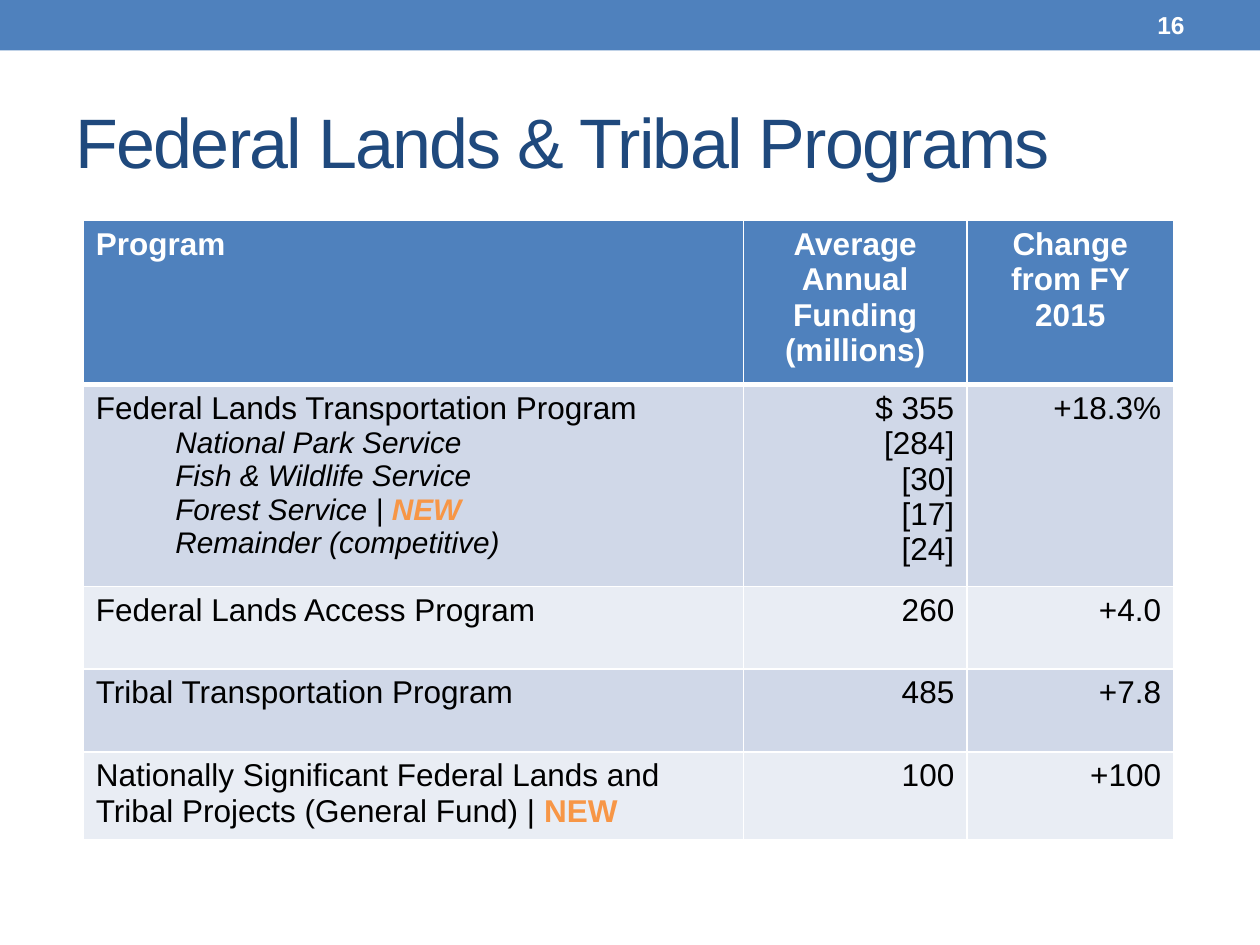
from pptx import Presentation
from pptx.dml.color import RGBColor
from pptx.enum.shapes import MSO_SHAPE
from pptx.enum.text import MSO_ANCHOR, PP_ALIGN
from pptx.oxml.ns import qn
from pptx.util import Cm, Pt
from lxml.etree import SubElement

BLUE = RGBColor(0x4F, 0x81, 0xBD)
NAVY = RGBColor(0x1F, 0x49, 0x7D)
ORANGE = RGBColor(0xF7, 0x96, 0x46)
BLACK = RGBColor(0, 0, 0)
WHITE = RGBColor(0xFF, 0xFF, 0xFF)
BANDS = [RGBColor(0xE9, 0xED, 0xF4), RGBColor(0xD0, 0xD8, 0xE8)]


def add_span(para, text, size, color, bold=False, italic=False):
    span = para.add_run()
    span.text = text
    span.font.name = "Arial"
    span.font.size = Pt(size)
    span.font.color.rgb = color
    span.font.bold = bold
    span.font.italic = italic
    return span


def add_borders(cell, bottom_width):
    properties = cell._tc.get_or_add_tcPr()
    for side, width in (("L", 1), ("R", 1), ("T", 1), ("B", bottom_width)):
        line = SubElement(properties, qn(f"a:ln{side}"), w=str(Pt(width)))
        fill = SubElement(line, qn("a:solidFill"))
        SubElement(fill, qn("a:srgbClr"), val=str(WHITE))


deck = Presentation()
deck.slide_width, deck.slide_height = Cm(25.4), Cm(19.05)
page = deck.slides.add_slide(deck.slide_layouts[5])

banner = page.shapes.add_shape(MSO_SHAPE.RECTANGLE, 0, 0, deck.slide_width, Cm(1.02))
banner.shadow.inherit = False
banner.fill.solid()
banner.fill.fore_color.rgb = BLUE
banner.line.fill.background()

title = page.shapes.title
title.left, title.top, title.width, title.height = Cm(1.27), Cm(1.47), Cm(22.86), Cm(2.74)
title.text_frame.vertical_anchor = MSO_ANCHOR.MIDDLE
para = title.text_frame.paragraphs[0]
para.alignment = PP_ALIGN.LEFT
span = add_span(para, "Federal Lands & Tribal Programs", 40, NAVY)
span.font._element.set("spc", "-100")

number_box = page.shapes.add_textbox(Cm(21.16), Cm(0.05), Cm(2.97), Cm(0.91))
number_box.text_frame.word_wrap = True
number_box.text_frame.vertical_anchor = MSO_ANCHOR.MIDDLE
para = number_box.text_frame.paragraphs[0]
para.alignment = PP_ALIGN.RIGHT
add_span(para, "16", 14, WHITE, bold=True)

rows = [
    (["Program"], ["Average Annual", "Funding (millions)"], ["Change from FY 2015"]),
    (
        [
            "Federal Lands Transportation Program",
            "National Park Service",
            "Fish & Wildlife Service",
            "Forest Service | NEW",
            "Remainder (competitive)",
        ],
        ["$ 355", "[284]", "[30]", "[17]", "[24]"],
        ["+18.3%"],
    ),
    (["Federal Lands Access Program"], ["260"], ["+4.0"]),
    (["Tribal Transportation Program"], ["485"], ["+7.8"]),
    (
        ["Nationally Significant Federal Lands and Tribal Projects (General Fund) | NEW"],
        ["100"],
        ["+100"],
    ),
]
column_widths = [13.31, 4.5, 4.17]
row_heights = [3.1, 3.78, 1.67, 1.67, 1.67]

frame = page.shapes.add_table(
    len(rows), len(column_widths), Cm(1.68), Cm(4.45),
    Cm(sum(column_widths)), Cm(sum(row_heights)),
)
programs = frame.table
for column, width in zip(programs.columns, column_widths):
    column.width = Cm(width)
for row, height in zip(programs.rows, row_heights):
    row.height = Cm(height)

for row_index, row in enumerate(rows):
    header = row_index == 0
    for column_index, lines in enumerate(row):
        cell = programs.cell(row_index, column_index)
        add_borders(cell, 3 if header else 1)
        cell.fill.solid()
        cell.fill.fore_color.rgb = BLUE if header else BANDS[row_index % 2]
        for line_index, text in enumerate(lines):
            texts = cell.text_frame
            para = texts.paragraphs[0] if line_index == 0 else texts.add_paragraph()
            agency = column_index == 0 and line_index > 0
            if column_index > 0:
                para.alignment = PP_ALIGN.CENTER if header else PP_ALIGN.RIGHT
            if agency:
                para.level = 1
                para._p.get_or_add_pPr().set("marL", str(Cm(1.6)))
            size = 17 if agency else 18
            plain = text.removesuffix("NEW")
            add_span(para, plain, size, WHITE if header else BLACK, header, agency)
            if plain != text:
                add_span(para, "NEW", size, ORANGE, True, agency)

deck.save("out.pptx")
